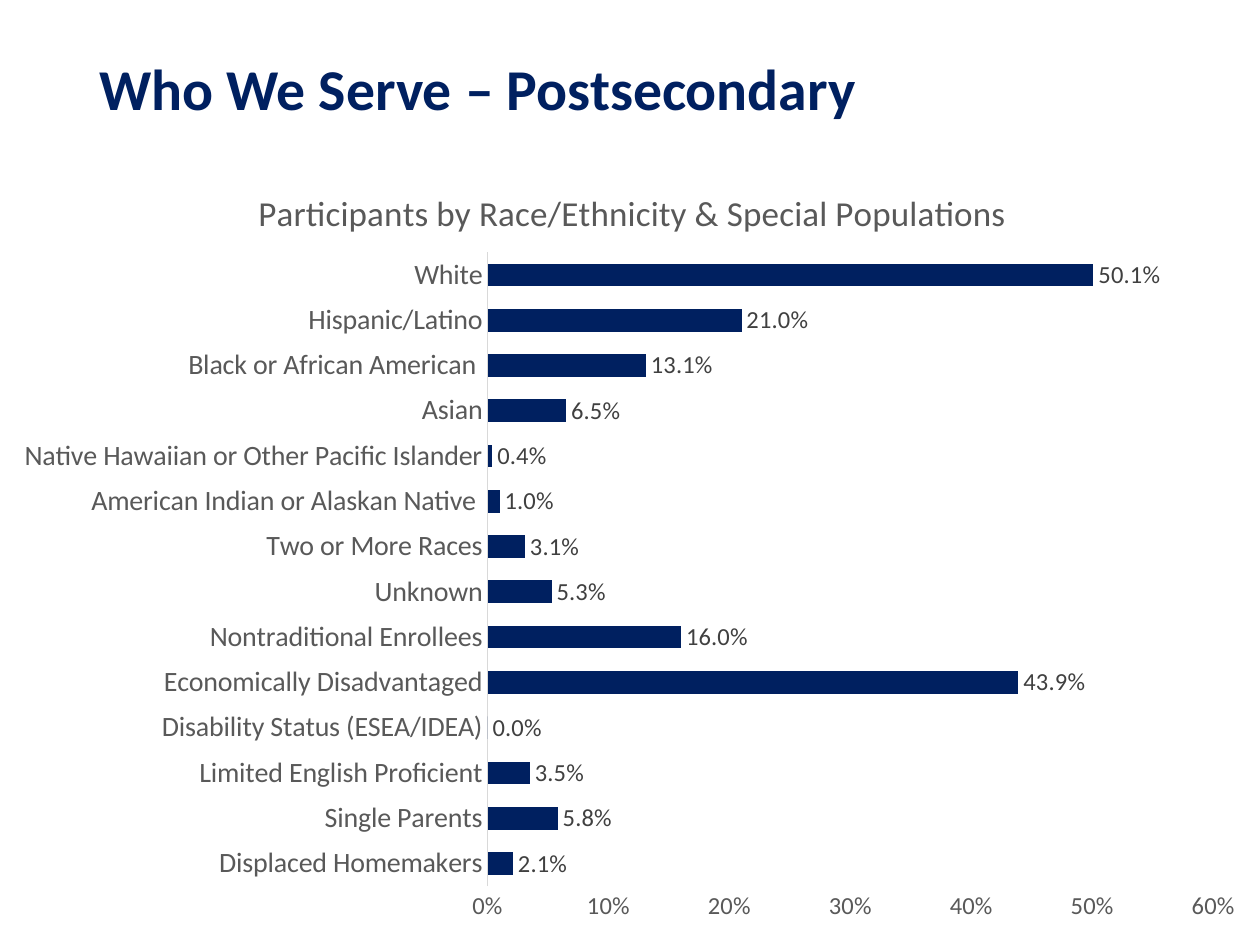
"""Build the slide on postsecondary participants by race, ethnicity and special population."""
from lxml.etree import SubElement
from pptx import Presentation
from pptx.chart.data import CategoryChartData
from pptx.dml.color import RGBColor
from pptx.enum.chart import XL_CHART_TYPE, XL_LABEL_POSITION, XL_TICK_MARK
from pptx.enum.text import MSO_ANCHOR, PP_ALIGN
from pptx.oxml.ns import qn
from pptx.util import Pt


def style(font, size, color, bold=False):
    """Set the typeface, size, colour and weight of a font."""
    font.name = "Calibri"
    font.size = Pt(size)
    font.bold = bold
    font.color.rgb = RGBColor.from_string(color)


def place(element, index, **settings):
    """Give a chart element a manual layout, as fractions of the chart."""
    for old in element.findall(qn("c:layout")):
        element.remove(old)
    layout = SubElement(element, qn("c:layout"))
    element.insert(index, layout)
    manual = SubElement(layout, qn("c:manualLayout"))
    for name, value in settings.items():
        SubElement(manual, qn(f"c:{name}")).set("val", str(value))


NAVY, GRAY, DARK_GRAY, LIGHT_GRAY = "002060", "595959", "404040", "D9D9D9"

shares = {
    "Displaced Homemakers": 0.021,
    "Single Parents": 0.058,
    "Limited English Proficient": 0.035,
    "Disability Status (ESEA/IDEA)": 0,
    "Economically Disadvantaged": 0.439,
    "Nontraditional Enrollees": 0.16,
    "Unknown": 0.053,
    "Two or More Races": 0.031,
    "American Indian or Alaskan Native ": 0.01,
    "Native Hawaiian or Other Pacific Islander": 0.004,
    "Asian": 0.065,
    "Black or African American ": 0.131,
    "Hispanic/Latino": 0.21,
    "White": 0.501,
}

deck = Presentation()
deck.slide_width, deck.slide_height = Pt(720), Pt(540)
page = deck.slides.add_slide(deck.slide_layouts[5])

title = page.shapes.title
title.left, title.top, title.width, title.height = Pt(49.5), Pt(0), Pt(621), Pt(104.4)
title.text_frame.vertical_anchor = MSO_ANCHOR.MIDDLE
paragraph = title.text_frame.paragraphs[0]
paragraph.alignment = PP_ALIGN.LEFT
paragraph.line_spacing = 0.9
span = paragraph.add_run()
span.text = "Who We Serve – Postsecondary"
style(span.font, 33, NAVY, bold=True)

data = CategoryChartData(number_format="0.0%")
data.categories = shares.keys()
data.add_series("Series 1", shares.values())
frame = page.shapes.add_chart(
    XL_CHART_TYPE.BAR_CLUSTERED, Pt(0), Pt(85.7), Pt(720), Pt(450), data)
chart = frame.chart
style(chart.font, 16, "000000")
chart.has_legend = False

chart.has_title = True
heading = chart.chart_title
span = heading.text_frame.paragraphs[0].add_run()
span.text = "Participants by Race/Ethnicity & Special Populations"
style(span.font, 20, GRAY)
heading.include_in_layout = False
place(heading.format and chart.chart_title.text_frame and chart.element.find(f".//{qn('c:title')}"),
      1, xMode="edge", yMode="edge", x=0.2, y=0.04)
place(chart.element.find(f".//{qn('c:plotArea')}"), 0, layoutTarget="inner",
      xMode="edge", yMode="edge", x=0.387, y=0.13, w=0.576, h=0.805)

for axis, size in ((chart.category_axis, 16), (chart.value_axis, 14)):
    axis.major_tick_mark = axis.minor_tick_mark = XL_TICK_MARK.NONE
    axis.has_major_gridlines = False
    style(axis.tick_labels.font, size, GRAY)
axis_line = chart.category_axis.format.line
axis_line.color.rgb = RGBColor.from_string(LIGHT_GRAY)
axis_line.width = Pt(0.75)
percent_axis = chart.value_axis
percent_axis.minimum_scale, percent_axis.maximum_scale, percent_axis.major_unit = 0, 0.6, 0.1
percent_axis.format.line.fill.background()
percent_axis.tick_labels.number_format = "0%"
percent_axis.tick_labels.number_format_is_linked = False

plot = chart.plots[0]
plot.gap_width = 100
plot.vary_by_categories = False
bars = plot.series[0]
bars.format.fill.solid()
bars.format.fill.fore_color.rgb = RGBColor.from_string(NAVY)
labels = bars.data_labels
labels.show_value = True
labels.position = XL_LABEL_POSITION.OUTSIDE_END
labels.number_format = "0.0%"
labels.number_format_is_linked = False
style(labels.font, 14, DARK_GRAY)

deck.save("out.pptx")
